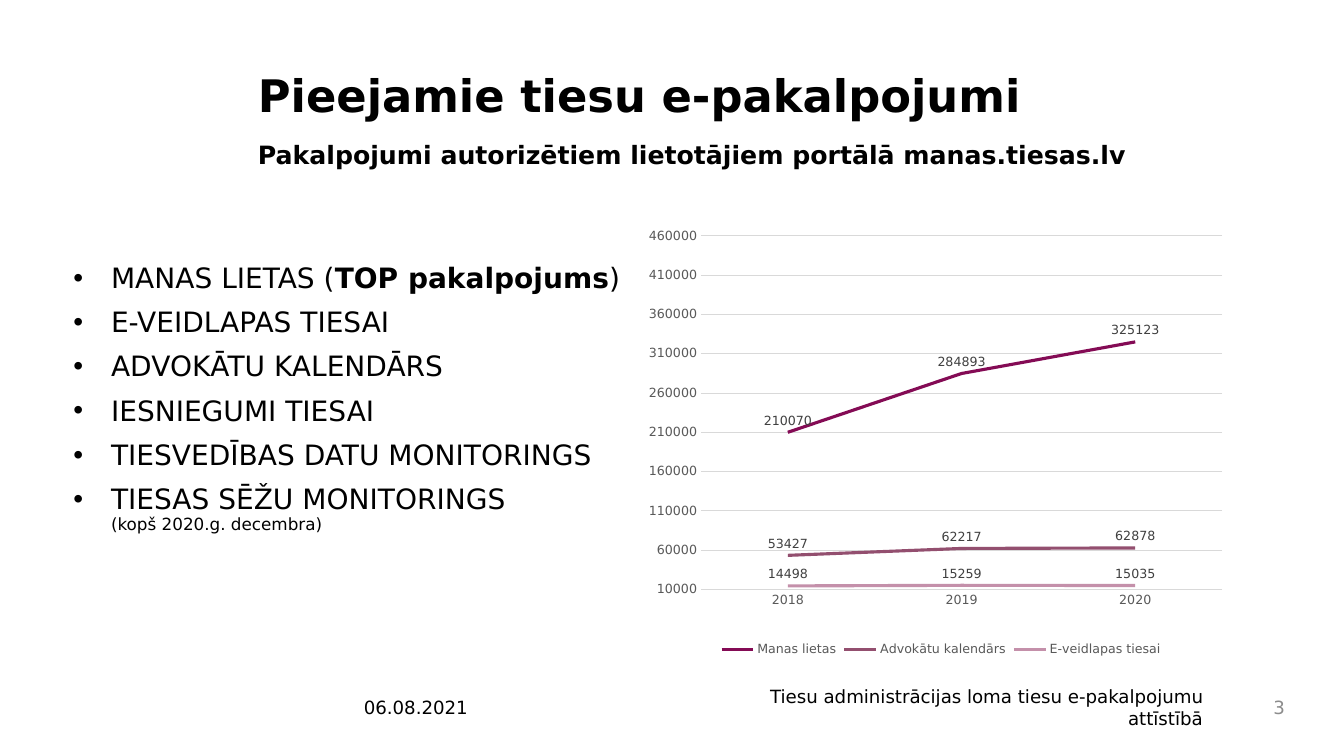
from lxml import etree
from pptx import Presentation
from pptx import util as u
from pptx.chart.data import CategoryChartData
from pptx.dml.color import RGBColor
from pptx.enum import chart as ch, text
from pptx.oxml import parse_xml
from pptx.oxml.ns import nsdecls, qn

COLORS = {
    "ink": "000000", "page_number": "8C8C8C", "axis": "595959",
    "label": "404040", "grid": "D9D9D9",
    "cases": "840B55", "calendar": "934F6F", "forms": "C490AA",
}
SERVICES = [
    ["MANAS LIETAS (", "TOP pakalpojums", ")"],
    ["E-VEIDLAPAS TIESAI"],
    ["ADVOKĀTU KALENDĀRS"],
    ["IESNIEGUMI TIESAI"],
    ["TIESVEDĪBAS DATU MONITORINGS"],
    ["TIESAS SĒŽU MONITORINGS\v(kopš 2020.g. decembra)"],
]
YEARS = ["2018", "2019", "2020"]
USAGE = [
    ("Manas lietas", "cases", (210070, 284893, 325123)),
    ("Advokātu kalendārs", "calendar", (53427, 62217, 62878)),
    ("E-veidlapas tiesai", "forms", (14498, 15259, 15035)),
]
PLOT_AREA = {"x": 0.097, "y": 0.019, "w": 0.875, "h": 0.816}
LEFT, RIGHT, JUSTIFY = text.PP_ALIGN.LEFT, text.PP_ALIGN.RIGHT, text.PP_ALIGN.JUSTIFY
TOP, MIDDLE = text.MSO_ANCHOR.TOP, text.MSO_ANCHOR.MIDDLE


class ServiceSlide:
    """Holds the style and the current slide and adds elements to it."""

    font_name = "DejaVu Sans"

    def __init__(self, slide):
        self.slide = slide

    def style(self, font, size, color="ink", bold=False):
        font.name = self.font_name
        font.size = u.Pt(size)
        font.bold = bold
        font.color.rgb = RGBColor.from_string(COLORS[color])

    def frame(self, box, anchor=TOP):
        text_frame = self.slide.shapes.add_textbox(*map(u.Cm, box)).text_frame
        text_frame.word_wrap = True
        text_frame.vertical_anchor = anchor
        return text_frame

    def line_of_text(self, wording, box, size, color="ink", bold=False,
                     align=LEFT, anchor=TOP, spacing=1.0):
        text_frame = self.frame(box, anchor)
        text_frame.text = wording
        paragraph = text_frame.paragraphs[0]
        paragraph.alignment = align
        paragraph.line_spacing = spacing
        self.style(paragraph.runs[0].font, size, color, bold)

    def bullets(self, items, box, size, note_size):
        text_frame = self.frame(box)
        for index, parts in enumerate(items):
            paragraph = text_frame.add_paragraph() if index else text_frame.paragraphs[0]
            paragraph.text = parts[0]
            for part in parts[1:]:
                paragraph.add_run().text = part
            paragraph.line_spacing = 0.9
            paragraph.space_before = u.Pt(10 if index else 0)
            properties = paragraph._p.get_or_add_pPr()
            properties.set("marL", str(u.Cm(0.95)))
            properties.set("indent", str(-u.Cm(0.95)))
            etree.SubElement(properties, qn("a:buFont"), typeface="Arial")
            etree.SubElement(properties, qn("a:buChar"), char="•")
            for position, run in enumerate(paragraph.runs):
                self.style(run.font, size, bold=len(parts) > 1 and position == 1)
            if "\v" in parts[0]:
                paragraph.runs[1].font.size = u.Pt(note_size)

    def line(self, line_format, color, width):
        line_format.color.rgb = RGBColor.from_string(COLORS[color])
        line_format.width = u.Pt(width)

    def line_chart(self, categories, series_rows, box):
        data = CategoryChartData(number_format="0")
        data.categories = categories
        for name, _, values in series_rows:
            data.add_series(name, values)
        chart = self.slide.shapes.add_chart(
            ch.XL_CHART_TYPE.LINE, *map(u.Cm, box), data).chart
        self.style(chart.font, 10)
        chart.has_title = False
        chart.has_legend = True
        chart.legend.position = ch.XL_LEGEND_POSITION.BOTTOM
        chart.legend.include_in_layout = False
        self.style(chart.legend.font, 9, "axis")

        category_axis, value_axis = chart.category_axis, chart.value_axis
        for axis in (category_axis, value_axis):
            axis.major_tick_mark = axis.minor_tick_mark = ch.XL_TICK_MARK.NONE
            self.style(axis.tick_labels.font, 9, "axis")
        self.line(category_axis.format.line, "grid", 0.75)
        value_axis.minimum_scale, value_axis.maximum_scale = 10000, 460000
        value_axis.major_unit = 50000
        value_axis.format.line.fill.background()
        self.line(value_axis.major_gridlines.format.line, "grid", 0.75)
        value_axis.tick_labels.number_format = "0"
        value_axis.tick_labels.number_format_is_linked = False

        plot = chart.plots[0]
        plot.vary_by_categories = False
        for series, (_, color, _) in zip(plot.series, series_rows):
            series.smooth = False
            series.marker.style = ch.XL_MARKER_STYLE.NONE
            self.line(series.format.line, color, 2.25)
            labels = series.data_labels
            labels.show_value = True
            labels.position = ch.XL_LABEL_POSITION.ABOVE
            self.style(labels.font, 9, "label")
        self.place_plot(chart)

    def place_plot(self, chart):
        modes = "".join(f'<c:{key}Mode val="edge"/>' for key in "xy")
        sizes = "".join(f'<c:{key} val="{value}"/>' for key, value in PLOT_AREA.items())
        plot_area = chart._chartSpace.chart.plotArea
        for layout in plot_area.findall(qn("c:layout")):
            plot_area.remove(layout)
        plot_area.insert(0, parse_xml(
            f'<c:layout {nsdecls("c")}><c:manualLayout><c:layoutTarget val="inner"/>'
            f'{modes}{sizes}</c:manualLayout></c:layout>'))


def main():
    presentation = Presentation()
    presentation.slide_width = u.Cm(33.87)
    presentation.slide_height = u.Cm(19.05)
    page = ServiceSlide(presentation.slides.add_slide(presentation.slide_layouts[6]))

    page.line_of_text("Pieejamie tiesu e-pakalpojumi", (6.25, 1.73, 24.97, 2.84),
                      32, bold=True, spacing=0.9)
    page.bullets(SERVICES, (1.6, 6.53, 14.63, 8.43), 20, 12)
    footers = [
        ("06.08.2021", 8.92, 7.62, "ink", LEFT),
        ("3", 30.78, 1.85, "page_number", RIGHT),
        ("Tiesu administrācijas loma tiesu e-pakalpojumu attīstībā",
         19.13, 11.43, "ink", RIGHT),
    ]
    for wording, left, width, color, align in footers:
        page.line_of_text(wording, (left, 17.32, width, 1.02), 13, color,
                          align=align, anchor=MIDDLE)
    page.line_of_text("Pakalpojumi autorizētiem lietotājiem portālā manas.tiesas.lv",
                      (6.25, 3.38, 25.73, 1.02), 18, bold=True, align=JUSTIFY)
    page.line_chart(YEARS, USAGE, (16.21, 5.74, 15.01, 10.92))
    presentation.save("out.pptx")


if __name__ == "__main__":
    main()
